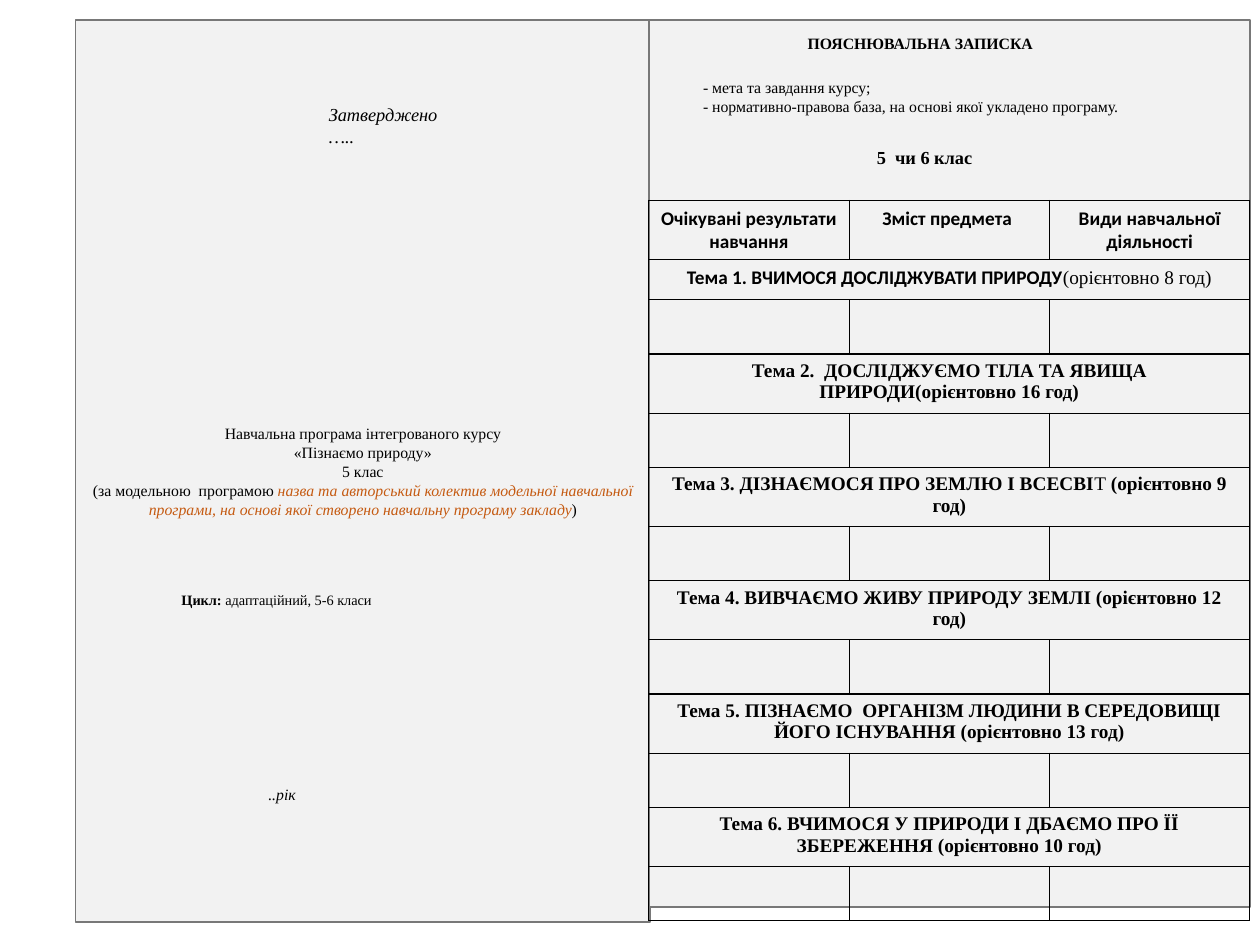
from lxml import etree
from pptx import Presentation
from pptx import util as u
from pptx.dml.color import RGBColor
from pptx.enum import shapes, text
from pptx.oxml.ns import qn

COLORS = {"panel": "F2F2F2", "edge": "787878", "ink": "000000", "accent": "C55A11"}
SERIF, SANS = "Times New Roman", "Calibri"
FRAME_FORMAT = {
    "word_wrap": True,
    "margin_left": u.Inches(0.07), "margin_right": u.Inches(0.07),
    "margin_top": u.Inches(0.04), "margin_bottom": u.Inches(0.04),
}
CELL_FORMAT = {
    "margin_left": u.Inches(0.08), "margin_right": u.Inches(0.08),
    "margin_top": u.Inches(0.05), "margin_bottom": u.Inches(0.05),
    "vertical_anchor": text.MSO_ANCHOR.TOP,
}
BOLD, ITALIC, SANS_BOLD = {"bold": True}, {"italic": True}, {"bold": True, "name": SANS}

PROGRAM_TITLE = [
    [("Навчальна програма інтегрованого курсу", {})],
    [("«Пізнаємо природу»", {})],
    [("5 клас", {})],
    [("(за модельною  програмою ", {}),
     ("назва та авторський колектив модельної навчальної програми, "
      "на основі якої створено навчальну програму закладу",
      {"italic": True, "color": "accent"}),
     (")", {})],
]
HEADINGS = ["Очікувані результати навчання", "Зміст предмета ", "Види навчальної діяльності"]
TOPICS = [
    [("Тема 1. ВЧИМОСЯ ДОСЛІДЖУВАТИ ПРИРОДУ", SANS_BOLD), ("(орієнтовно 8 год)", {})],
    [("Тема 2.  ДОСЛІДЖУЄМО ТІЛА ТА ЯВИЩА ПРИРОДИ(орієнтовно 16 год)", BOLD)],
    [("Тема 3. ДІЗНАЄМОСЯ ПРО ЗЕМЛЮ І ВСЕСВІ", BOLD), ("Т ", {}),
     ("(орієнтовно 9 год)", BOLD)],
    [("Тема 4. ВИВЧАЄМО ЖИВУ ПРИРОДУ ЗЕМЛІ (орієнтовно 12 год)", BOLD)],
    [("Тема 5. ПІЗНАЄМО  ОРГАНІЗМ ЛЮДИНИ В СЕРЕДОВИЩІ ЙОГО ІСНУВАННЯ "
      "(орієнтовно 13 год)", BOLD)],
    [("Тема 6. ВЧИМОСЯ У ПРИРОДИ І ДБАЄМО ПРО ЇЇ ЗБЕРЕЖЕННЯ (орієнтовно 10 год)", BOLD)],
]


def apply(target, values):
    for attribute, value in values.items():
        setattr(target, attribute, value)


def rgb(name):
    return RGBColor.from_string(COLORS[name])


class Page:
    def __init__(self, slide):
        self.slide = slide

    def fill_text(self, frame, paragraphs, size, align=text.PP_ALIGN.LEFT):
        """Fill a frame with paragraphs, each a list of (words, font changes)."""
        for index, runs in enumerate(paragraphs):
            paragraph = frame.paragraphs[0] if index == 0 else frame.add_paragraph()
            paragraph.alignment = align
            for words, changes in runs:
                style = {"name": SERIF, "bold": False, "italic": False,
                         "color": "ink", **changes}
                run = paragraph.add_run()
                run.text = words
                run.font.color.rgb = rgb(style.pop("color"))
                apply(run.font, {"size": u.Pt(size), **style})

    def panel(self, *box):
        sheet = self.slide.shapes.add_shape(
            shapes.MSO_SHAPE.RECTANGLE, *map(u.Inches, box))
        sheet.shadow.inherit = False
        sheet.fill.solid()
        sheet.fill.fore_color.rgb = rgb("panel")
        sheet.line.color.rgb = rgb("edge")
        sheet.line.width = u.Pt(1)
        apply(sheet.text_frame, {**FRAME_FORMAT, "vertical_anchor": text.MSO_ANCHOR.MIDDLE})
        return sheet.text_frame

    def note(self, box, paragraphs, size):
        frame = self.slide.shapes.add_textbox(*map(u.Inches, box)).text_frame
        apply(frame, {**FRAME_FORMAT, "auto_size": text.MSO_AUTO_SIZE.SHAPE_TO_FIT_TEXT})
        self.fill_text(frame, paragraphs, size)

    def border(self, cell):
        properties = cell._tc.get_or_add_tcPr()
        for side in ("a:lnL", "a:lnR", "a:lnT", "a:lnB"):
            line = etree.SubElement(properties, qn(side), w=str(u.Pt(0.75)))
            fill = etree.SubElement(line, qn("a:solidFill"))
            etree.SubElement(fill, qn("a:srgbClr"), val=COLORS["ink"])

    def plan(self, left, top, width, headings, topics):
        """Draw a heading row, then a merged topic row and an empty row per topic."""
        heights = [0.47, 0.32, 0.43] + [0.47, 0.43] * (len(topics) - 1)
        box = map(u.Inches, (left, top, width, sum(heights)))
        table = self.slide.shapes.add_table(len(heights), len(headings), *box).table
        apply(table, {"first_row": False, "horz_banding": False})
        for row, height in zip(table.rows, heights):
            row.height = u.Inches(height)
        for cell in table.iter_cells():
            apply(cell, CELL_FORMAT)
            self.border(cell)
            cell.fill.background()
        for column, heading in enumerate(headings):
            self.fill_text(table.cell(0, column).text_frame, [[(heading, SANS_BOLD)]],
                           11, text.PP_ALIGN.CENTER)
        for index, topic in enumerate(topics):
            row = 1 + 2 * index
            title = table.cell(row, 0)
            title.merge(table.cell(row, len(headings) - 1))
            self.fill_text(title.text_frame, [topic], 11, text.PP_ALIGN.CENTER)


def main():
    deck = Presentation()
    apply(deck, {"slide_width": u.Inches(10), "slide_height": u.Inches(7.5)})
    page = Page(deck.slides.add_slide(deck.slide_layouts[6]))

    cover = page.panel(0.6, 0.16, 4.56, 7.16)
    page.fill_text(cover, PROGRAM_TITLE, 9, text.PP_ALIGN.CENTER)
    page.note((2.54, 0.78, 1.03, 0.43), [[("Затверджено", ITALIC)], [("…..", ITALIC)]], 10.5)
    page.note((2.06, 6.19, 0.4, 0.23), [[("..рік", ITALIC)]], 9)
    page.note((1.37, 4.65, 1.69, 0.35),
              [[("Цикл:", BOLD), (" адаптаційний, 5-6 класи", {})]], 8.2)

    page.panel(5.15, 0.16, 4.77, 7.04)
    page.note((6.34, 0.23, 1.96, 0.23), [[("ПОЯСНЮВАЛЬНА ЗАПИСКА", BOLD)]], 9)
    page.note((5.51, 0.58, 3.5, 0.38),
              [[("- мета та завдання курсу;", {})],
               [("- нормативно-правова база, на основі якої укладено програму.", {})]], 9)
    page.note((6.89, 1.12, 1.3, 0.25), [[("5  чи 6 клас", BOLD)]], 10.5)
    page.plan(5.15, 1.59, 4.77, HEADINGS, TOPICS)
    deck.save("out.pptx")


if __name__ == "__main__":
    main()
